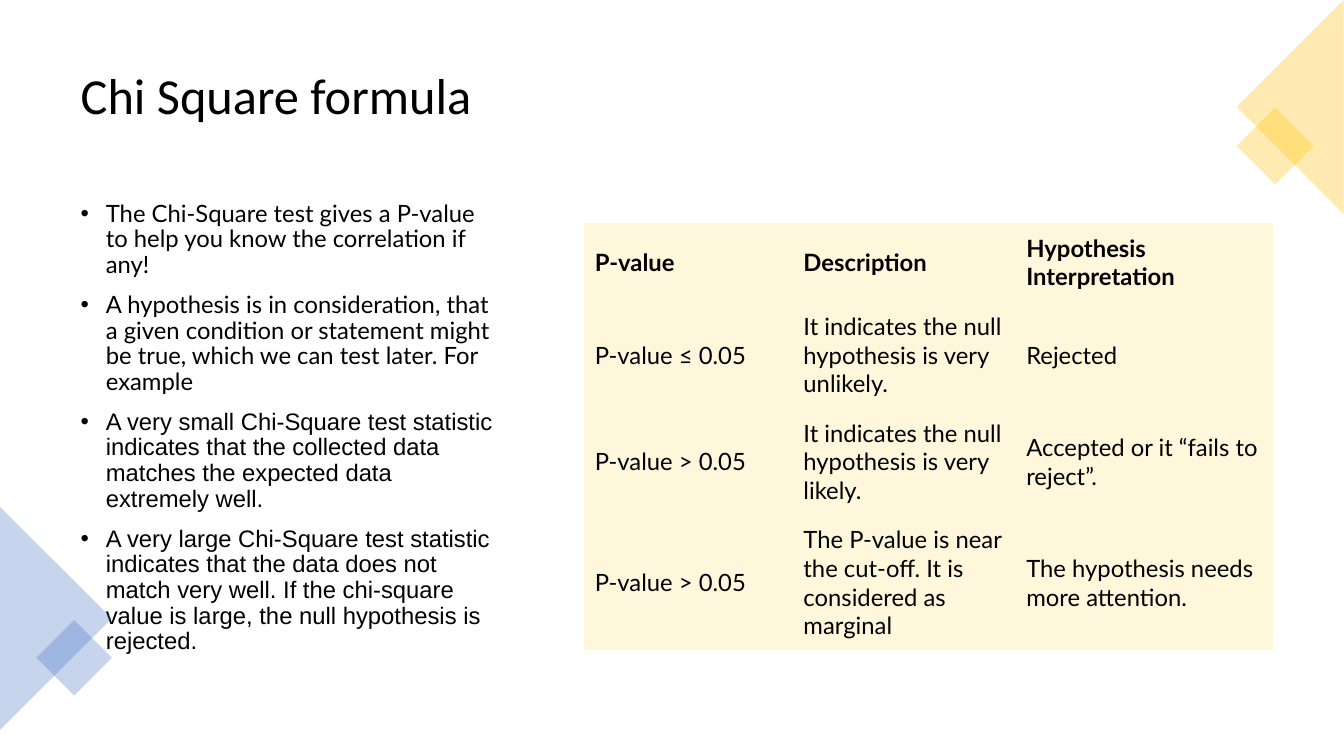
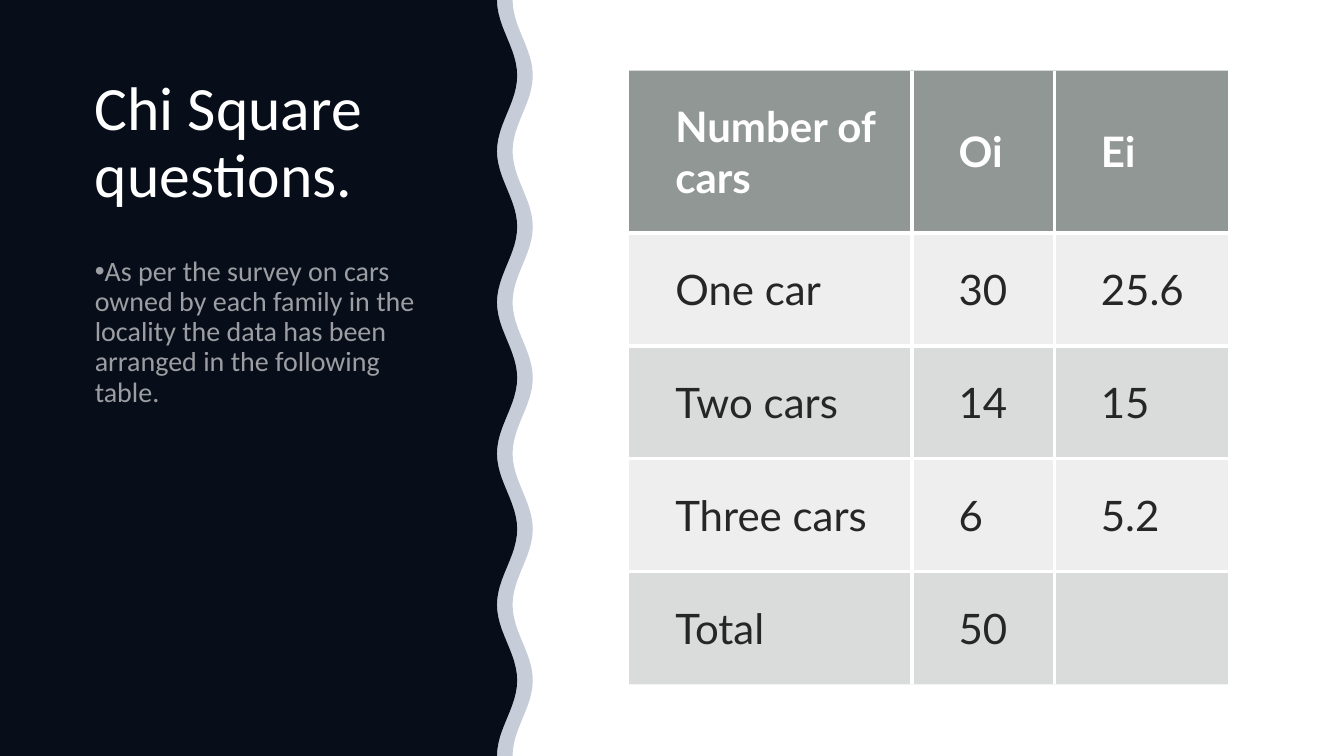
import math
from dataclasses import dataclass

from lxml import etree
from pptx import Presentation, util as u
from pptx.dml.color import RGBColor
from pptx.enum import shapes, text
from pptx.oxml.ns import qn

W, H = u.Inches(40 / 3), u.Inches(7.5)
PLAIN_TABLE = "{2D5ABB26-0587-4C30-8999-92F81FD0307C}"


@dataclass(frozen=True)
class Theme:
    black: str = "000000"
    white: str = "FFFFFF"
    ink: str = "262626"
    blue: str = "4472C4"
    gold: str = "FFC000"
    navy: str = "203864"
    cream: str = "FFF7DB"
    header: str = "636B68"
    band: str = "878E8B"
    heading_font: str = "Calibri"
    text_font: str = "Lato"
    alt_font: str = "Arial"
    title: int = 36
    side_title: int = 44
    body: int = 17
    side_body: int = 20
    data: int = 30


T = Theme()


# Geometry: all lengths are percentages of the slide
def across(share):
    return u.Emu(round(W * share / 100))


def down(share):
    return u.Emu(round(H * share / 100))


def box(left, top, width, height):
    return across(left), down(top), across(width), down(height)


# Formatting
def apply(obj, values):
    for name, value in values.items():
        setattr(obj, name, value)


def set_alpha(element, percent):
    for clr in element.iter(qn("a:srgbClr")):
        etree.SubElement(clr, qn("a:alpha"), val=str(percent * 1000))


def paint(target, element, color, alpha=100):
    target.fill.solid()
    target.fill.fore_color.rgb = RGBColor.from_string(color)
    if alpha < 100:
        set_alpha(element, alpha)


def write(p, words, font, size, color, bold=False, alpha=100):
    r = p.add_run()
    r.text = words
    apply(r.font, {"name": font, "size": u.Pt(size), "bold": bold})
    r.font.color.rgb = RGBColor.from_string(color)
    if alpha < 100:
        set_alpha(r.font._element, alpha)


# Element builders
def fill_placeholder(ph, at, items, anchor=text.MSO_ANCHOR.TOP, before=0,
                     after=0, margin=0, indent=0):
    """Each item holds the arguments of write() for one paragraph."""
    apply(ph, dict(zip(("left", "top", "width", "height"), box(*at))))
    ph.element.getparent().append(ph.element)  # bring to front
    tf = ph.text_frame
    apply(tf, {"word_wrap": True, "auto_size": text.MSO_AUTO_SIZE.NONE,
               "vertical_anchor": anchor})
    for i, item in enumerate(items):
        p = tf.add_paragraph() if i else tf.paragraphs[0]
        apply(p, {"alignment": text.PP_ALIGN.LEFT, "line_spacing": 0.9,
                  "space_before": u.Pt(before), "space_after": u.Pt(after)})
        pPr = p._p.get_or_add_pPr()
        pPr.set("marL", str(u.Inches(margin)))
        pPr.set("indent", str(u.Inches(indent)))
        write(p, *item)


def finish(shape, color, alpha):
    shape.shadow.inherit = False
    shape.line.fill.background()
    paint(shape, shape.element.spPr, color, alpha)


def add_facet(s, kind, at, rotation, color):
    shape = s.shapes.add_shape(kind, *box(*at))
    shape.rotation = rotation
    finish(shape, color, 30)


def add_wavy_panel(s, middle, color, alpha=100, swing=0.75, waves=5, steps=120):
    edge = [(across(middle - swing * math.cos(2 * math.pi * waves * i / steps)),
             down(100 * i / steps)) for i in range(steps + 1)]
    outline = s.shapes.build_freeform(0, 0)
    outline.add_line_segments(edge + [(0, H)], close=True)
    finish(outline.convert_to_shape(), color, alpha)


def add_border(cell, side):
    ln = etree.Element(qn("a:" + side), w=str(u.Pt(3)))
    fill = etree.SubElement(ln, qn("a:solidFill"))
    etree.SubElement(fill, qn("a:srgbClr"), val=T.white)
    return ln


def rule_cell(cell, row, col, last_row, last_col):
    inner = {"lnL": col > 0, "lnR": col < last_col,
             "lnT": row > 0, "lnB": row < last_row}
    lines = [add_border(cell, side) for side, shown in inner.items() if shown]
    tcPr = cell._tc.get_or_add_tcPr()
    for i, ln in enumerate(lines):  # borders come before the fill
        tcPr.insert(i, ln)


def add_grid(s, left, top, cols, rows, data, insets, look, ruled=False):
    """look(row) gives the cell fill and the text format of a row."""
    frame = s.shapes.add_table(len(rows), len(cols),
                               *box(left, top, sum(cols), sum(rows)))
    frame.element.find(".//" + qn("a:tableStyleId")).text = PLAIN_TABLE
    table = frame.table
    apply(table, {"first_row": False, "horz_banding": False})
    for column, share in zip(table.columns, cols):
        column.width = across(share)
    sides = ("margin_left", "margin_top", "margin_right", "margin_bottom")
    for r, (height, words) in enumerate(zip(rows, data)):
        table.rows[r].height = down(height)
        fill, font = look(r)
        for c, word in enumerate(words):
            cell = table.cell(r, c)
            apply(cell, dict(zip(sides, map(u.Inches, insets))))
            cell.vertical_anchor = text.MSO_ANCHOR.MIDDLE
            paint(cell, cell._tc, *fill)
            if word:
                write(cell.text_frame.paragraphs[0], word, **font)
            if ruled:
                rule_cell(cell, r, c, len(rows) - 1, len(cols) - 1)


# Row looks
def cream_row(row):
    return (T.cream,), {"font": T.text_font, "size": T.body,
                        "color": T.black, "bold": row == 0}


def banded_row(row):
    fill = (T.band, 15 if row % 2 else 30) if row else (T.header, 70)
    return fill, {"font": T.text_font, "size": T.data,
                  "color": T.ink if row else T.white, "bold": row == 0}


# Slides
def formula_slide(s):
    title, body = s.placeholders
    fill_placeholder(title, (5.25, 4.67, 89.5, 16.53),
                     [("Chi Square formula", T.heading_font, T.title, T.black)],
                     anchor=text.MSO_ANCHOR.MIDDLE)
    points = [
        ("The Chi-Square test gives a P-value to help you know the "
         "correlation if any!", T.text_font),
        ("A hypothesis is in consideration, that a given condition or statement "
         "might be true, which we can test later. For example", T.text_font),
        ("A very small Chi-Square test statistic indicates that the collected "
         "data matches the expected data extremely well.", T.alt_font),
        ("A very large Chi-Square test statistic indicates that the data does "
         "not match very well. If the chi-square value is large, the null "
         "hypothesis is rejected.", T.alt_font),
    ]
    fill_placeholder(body, (5.25, 26, 32.85, 64.13),
                     [(*point, T.body, T.black) for point in points],
                     before=10, margin=0.25, indent=-0.25)

    # Corner facets
    triangle = shapes.MSO_SHAPE.ISOSCELES_TRIANGLE
    square = shapes.MSO_SHAPE.RECTANGLE
    for facet in (
        (triangle, (-4.13, 74.4, 16.58, 14.8), 90, T.blue),
        (square, (3.53, 83.47, 3.98, 7.07), 45, T.blue),
        (square, (92.85, 15.73, 4.05, 7.2), 45, T.gold),
        (triangle, (88.05, 7.07, 15.9, 14.13), 270, T.gold),
    ):
        add_facet(s, *facet)

    add_grid(s, 43.43, 29.47, (15.53, 16.58, 19.2), (10.4, 14.13, 14.13, 17.87), [
        ("P-value", "Description", "Hypothesis Interpretation"),
        ("P-value ≤ 0.05", "It indicates the null hypothesis is very unlikely.",
         "Rejected"),
        ("P-value > 0.05", "It indicates the null hypothesis is very likely.",
         "Accepted or it “fails to reject”."),
        ("P-value > 0.05",
         "The P-value is near the cut-off. It is considered as marginal",
         "The hypothesis needs more attention."),
    ], (0.11, 0.09, 0.07, 0.09), cream_row)


def questions_slide(s):
    # Wavy side panel
    add_wavy_panel(s, 37.73, T.black)
    add_wavy_panel(s, 38.89, T.navy, alpha=25)

    title, body = s.placeholders
    fill_placeholder(title, (6.3, 9.6, 27.75, 21.73),
                     [("Chi Square questions.", T.heading_font, T.side_title,
                       T.white)])
    fill_placeholder(body, (6.3, 33.33, 27.75, 56),
                     [("As per the survey on cars owned by each family in the "
                       "locality the data has been arranged in the following "
                       "table.", T.heading_font, T.side_body, T.white, False, 60)],
                     after=6, indent=-0.25)

    add_grid(s, 46.8, 9.33, (21.08, 10.58, 12.9), (21.47,) + (14.93,) * 4, [
        ("Number of cars", "Oi", "Ei"),
        ("One car", "30", "25.6"),
        ("Two cars", "14", "15"),
        ("Three cars", "6", "5.2"),
        ("Total", "50", ""),
    ], (0.46, 0.28, 0.28, 0.28), banded_row, ruled=True)


def main():
    prs = Presentation()
    apply(prs, {"slide_width": W, "slide_height": H})
    for build in (formula_slide, questions_slide):
        build(prs.slides.add_slide(prs.slide_layouts[1]))
    prs.save("out.pptx")


if __name__ == "__main__":
    main()
